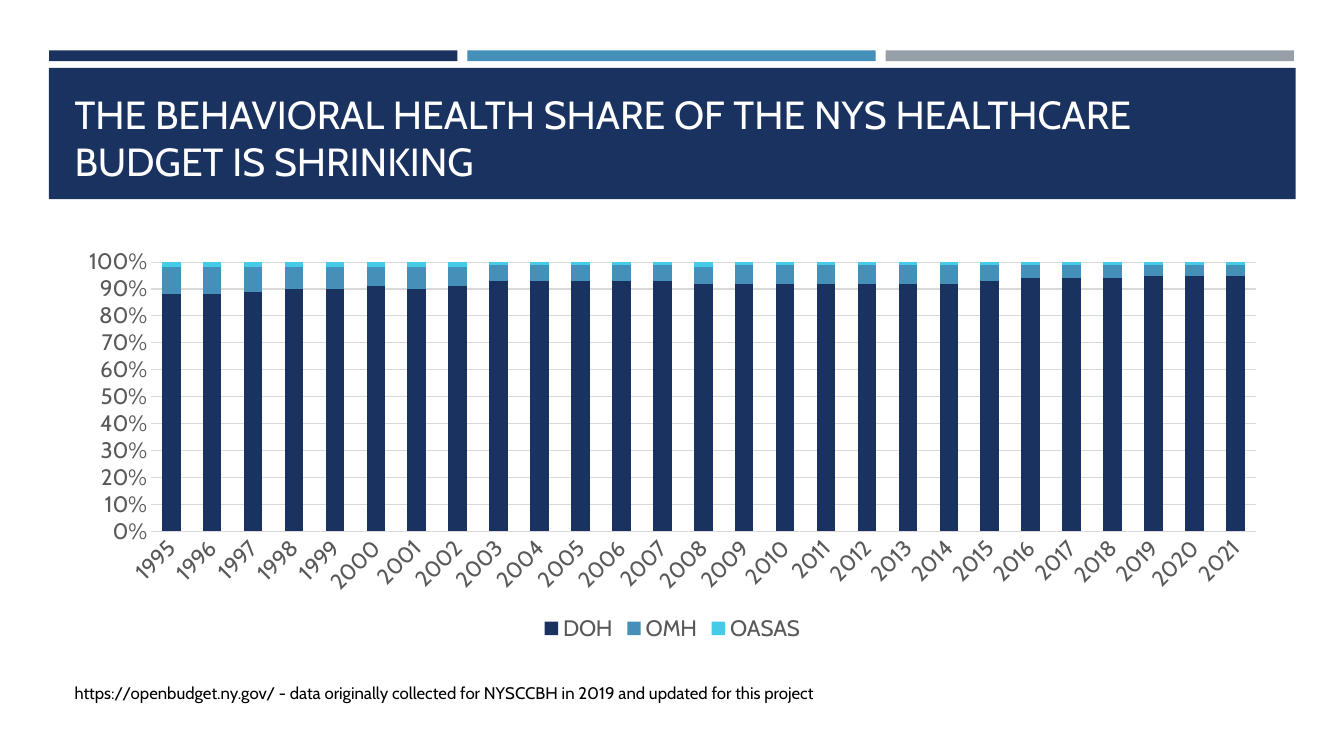
from dataclasses import dataclass

from pptx import Presentation
from pptx.chart.data import CategoryChartData
from pptx.dml.color import RGBColor
from pptx.enum.chart import XL_CHART_TYPE, XL_LEGEND_POSITION, XL_TICK_MARK
from pptx.enum.shapes import MSO_SHAPE
from pptx.enum.text import MSO_ANCHOR
from pptx.util import Cm, Pt

RECT = MSO_SHAPE.RECTANGLE
STACK = XL_CHART_TYPE.COLUMN_STACKED_100
BELOW = XL_LEGEND_POSITION.BOTTOM
NO_TICK = XL_TICK_MARK.NONE
TOP, BASE = MSO_ANCHOR.TOP, MSO_ANCHOR.BOTTOM


@dataclass(frozen=True)
class Theme:
    face: str = "Cabin"
    navy: str = "1A3260"
    blue: str = "4590B8"
    aqua: str = "45CBE8"
    gray: str = "969FA7"
    white: str = "FFFEFF"
    black: str = "000000"
    label: str = "595959"
    grid: str = "D9D9D9"
    title: int = 28
    axis: int = 16
    note: int = 12


THEME = Theme()
LEFT, WIDE = 1.63, 30.63  # shared text and chart column, in cm

TITLE = "THE BEHAVIORAL HEALTH SHARE OF THE NYS HEALTHCARE BUDGET IS SHRINKING"
NOTE = ("https://openbudget.ny.gov/ - data originally collected for NYSCCBH "
        "in 2019 and updated for this project")

YEARS = [str(year) for year in range(1995, 2022)]
SHARES = {
    "DOH": (THEME.navy, [88, 89, 89, 90, 90, 91, 91, 91, 92, 93, 93, 93, 93, 92,
                         91, 92, 92, 92, 92, 92, 93, 94, 94, 94, 95, 95, 95]),
    "OMH": (THEME.blue, [10, 10, 9, 8, 8, 7, 8, 7, 6, 6, 6, 6, 6, 6,
                         7, 7, 7, 7, 7, 7, 6, 5, 5, 5, 4, 4, 4]),
    "OASAS": (THEME.aqua, [2, 2, 2, 2, 2, 2, 2, 2, 1, 1, 1, 1, 1, 2,
                           1, 1, 1, 1, 1, 1, 1, 1, 1, 1, 1, 1, 1]),
}


def paint(fill, color):
    fill.solid()
    fill.fore_color.rgb = RGBColor.from_string(color)


def style(font, size, color):
    font.name = THEME.face
    font.size = Pt(size)
    font.color.rgb = RGBColor.from_string(color)


def add_bar(slide, x, y, w, h, color):
    bar = slide.shapes.add_shape(RECT, Cm(x), Cm(y), Cm(w), Cm(h))
    bar.shadow.inherit = False
    paint(bar.fill, color)
    bar.line.fill.background()


def add_text(slide, y, h, text, size, color, anchor):
    box = slide.shapes.add_textbox(Cm(LEFT), Cm(y), Cm(WIDE), Cm(h))
    frame = box.text_frame
    frame.word_wrap = True
    frame.vertical_anchor = anchor
    frame.text = text
    style(frame.paragraphs[0].runs[0].font, size, color)


def style_axis(axis):
    axis.major_tick_mark = axis.minor_tick_mark = NO_TICK
    axis.format.line.fill.background()
    style(axis.tick_labels.font, THEME.axis, THEME.label)


def add_chart(slide, y, h):
    data = CategoryChartData()
    data.categories = YEARS
    for name, (_, vals) in SHARES.items():
        data.add_series(name, vals)
    chart = slide.shapes.add_chart(
        STACK, Cm(LEFT), Cm(y), Cm(WIDE), Cm(h), data).chart
    chart.has_title = False
    style(chart.font, THEME.axis, THEME.label)

    # Columns
    plot = chart.plots[0]
    plot.gap_width, plot.overlap = 120, 100
    plot.vary_by_categories = False
    for part in plot.series:
        paint(part.format.fill, SHARES[part.name][0])

    # Axes, with slanted years
    years, share = chart.category_axis, chart.value_axis
    style_axis(years)
    style_axis(share)
    years._element.xpath("c:txPr/a:bodyPr")[0].set("rot", "-2700000")
    share.minimum_scale = 0
    share.tick_labels.number_format = "0%"
    share.tick_labels.number_format_is_linked = False
    grid = share.major_gridlines.format.line
    grid.width = Pt(0.75)
    paint(grid.fill, THEME.grid)

    # Legend
    chart.has_legend = True
    chart.legend.position = BELOW
    chart.legend.include_in_layout = False
    style(chart.legend.font, THEME.axis, THEME.label)


def main():
    deck = Presentation()
    deck.slide_width, deck.slide_height = Cm(33.87), Cm(19.05)
    slide = deck.slides.add_slide(deck.slide_layouts[6])

    # Header: three strips above a title band
    for i, color in enumerate((THEME.navy, THEME.blue, THEME.gray)):
        add_bar(slide, 1.24 + i * 10.54, 1.27, 10.29, 0.27, color)
    add_bar(slide, 1.23, 1.71, 31.42, 3.31, THEME.navy)
    add_text(slide, 1.96, 2.82, TITLE, THEME.title, THEME.white, BASE)

    # Chart and its source
    add_chart(slide, 6.07, 10.21)
    add_text(slide, 17.09, 0.77, NOTE, THEME.note, THEME.black, TOP)

    deck.save("out.pptx")


if __name__ == "__main__":
    main()
